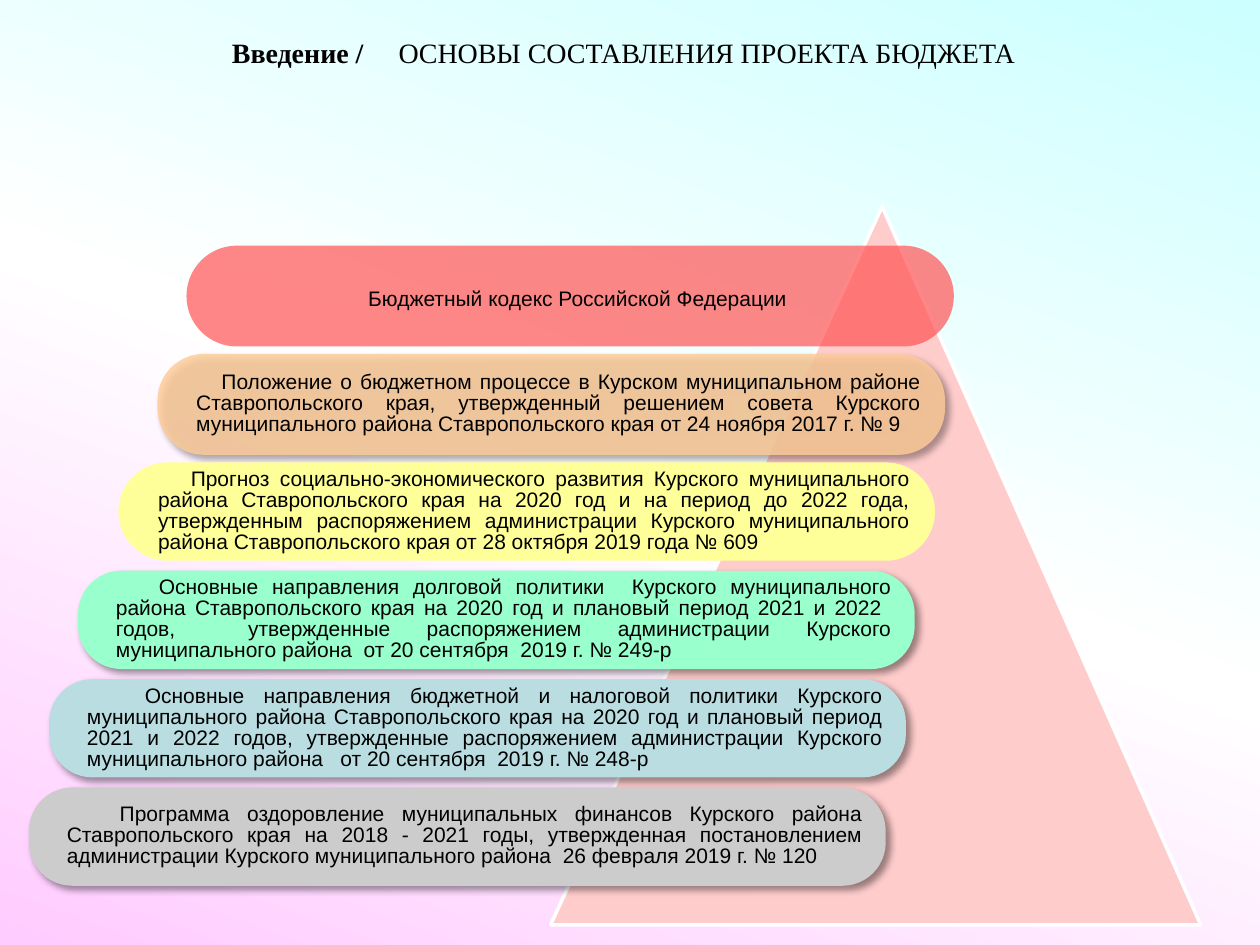
from copy import deepcopy
from dataclasses import dataclass

from lxml.etree import SubElement
from pptx import Presentation
from pptx.dml.color import RGBColor
from pptx.enum.shapes import MSO_SHAPE as Preset
from pptx.enum.text import MSO_ANCHOR as Anchor, MSO_AUTO_SIZE as AutoSize, PP_ALIGN as Align
from pptx.oxml.ns import qn
from pptx.util import Emu, Inches, Pt

COLORS = {
    "black": "000000", "white": "FFFFFF", "cyan": "CCFFFF", "pink": "FFCCFF",
    "rose": "FFCCCC", "red": "FF5050", "orange": "FFCC99", "yellow": "FFFF99",
    "green": "99FFCC", "blue": "BADDE1", "gray": "CCCCCC",
}
FIRST_BAR_TOP = 1.95
BAR_PITCH = 0.86
BODY_FORMAT = {"name": "Arial", "size": Pt(12), "bold": False}
TITLE_FORMAT = {"name": "Times New Roman", "size": Pt(16)}
BAR_FRAME = {
    "margin_left": Inches(0.2), "margin_right": Inches(0.08),
    "margin_top": Inches(0.05), "margin_bottom": Inches(0.05),
    "word_wrap": True, "vertical_anchor": Anchor.MIDDLE,
}
TITLE_FRAME = {
    "word_wrap": True, "vertical_anchor": Anchor.TOP,
    "auto_size": AutoSize.SHAPE_TO_FIT_TEXT,
}


@dataclass
class Bar:
    text: str
    color: str
    left: float
    width: float
    height: float = 0.78
    rounding: float = 0.44
    indent: float = 0
    opacity: int = 100
    shadow: bool = True
    align: Align = Align.JUSTIFY
    line_spacing: int = 12


BARS = [
    Bar("Бюджетный кодекс Российской Федерации", "red", 1.48, 6.09, 0.8, 0.5,
        opacity=69, shadow=False, align=Align.CENTER, line_spacing=17),
    Bar("Положение о бюджетном процессе в Курском муниципальном районе "
        "Ставропольского края, утвержденный решением совета Курского муниципального "
        "района Ставропольского края от 24 ноября 2017 г. № 9",
        "orange", 1.25, 6.25, 0.8, 0.46, indent=0.2, opacity=82),
    Bar("Прогноз социально-экономического развития Курского муниципального района "
        "Ставропольского края на 2020 год и на период до 2022 года, утвержденным "
        "распоряжением администрации Курского муниципального района "
        "Ставропольского края от 28 октября 2019 года № 609",
        "yellow", 0.94, 6.48, rounding=0.5, indent=0.26, shadow=False),
    Bar("Основные направления долговой политики  Курского муниципального района "
        "Ставропольского края на 2020 год и плановый период 2021 и 2022  годов,  "
        "утвержденные распоряжением администрации Курского муниципального района  "
        "от 20 сентября  2019 г. № 249-р",
        "green", 0.62, 6.64, indent=0.34),
    Bar("Основные направления бюджетной и налоговой политики Курского "
        "муниципального района Ставропольского края на 2020 год и плановый период "
        "2021 и 2022 годов, утвержденные распоряжением администрации Курского "
        "муниципального района   от 20 сентября  2019 г. № 248-р",
        "blue", 0.39, 6.8, indent=0.46),
    Bar("Программа оздоровление муниципальных финансов Курского района "
        "Ставропольского края на 2018 - 2021 годы, утвержденная постановлением "
        "администрации Курского муниципального района  26 февраля 2019 г. № 120",
        "gray", 0.23, 6.8, indent=0.42),
]


def rgb(name: str) -> RGBColor:
    return RGBColor.from_string(COLORS[name])


def apply(target, values: dict) -> None:
    for name, value in values.items():
        setattr(target, name, value)


def place(shape, left: float, top: float, width: float, height: float) -> None:
    apply(shape, {"left": Inches(left), "top": Inches(top),
                  "width": Inches(width), "height": Inches(height)})


def paint_background(slide) -> None:
    fill = slide.background.fill
    fill.gradient()
    fill.gradient_angle = 250
    stop_list = slide.element.find(".//" + qn("a:gsLst"))
    stop_list.append(deepcopy(stop_list[0]))
    for stop, name, position in zip(fill.gradient_stops, ("cyan", "white", "pink"), (0, 0.5, 1)):
        stop.color.rgb = rgb(name)
        stop.position = position


def add_title(slide) -> None:
    title = slide.shapes.title
    place(title, 1.09, 0.23, 7.72, 0.37)
    apply(title.text_frame, TITLE_FRAME)
    paragraph = title.text_frame.paragraphs[0]
    paragraph.alignment = Align.CENTER
    parts = (("Введение /", True, 0), (" ", True, 16),
             ("ОСНОВЫ СОСТАВЛЕНИЯ ПРОЕКТА БЮДЖЕТА", False, 0))
    for text, bold, tracking in parts:
        run = paragraph.add_run()
        run.text = text
        apply(run.font, {**TITLE_FORMAT, "bold": bold})
        run.font.color.rgb = rgb("black")
        if tracking:
            run.font._element.set("spc", str(tracking * 100))


def add_triangle(slide) -> None:
    triangle = slide.shapes.add_shape(Preset.ISOSCELES_TRIANGLE, 0, 0, 0, 0)
    place(triangle, 4.37, 1.64, 5.16, 5.7)
    triangle.adjustments[0] = 0.51
    triangle.shadow.inherit = False
    triangle.fill.solid()
    triangle.fill.fore_color.rgb = rgb("rose")
    triangle.line.color.rgb = rgb("white")
    triangle.line.width = Pt(2)


def set_opacity(color_element, percent: int) -> None:
    SubElement(color_element, qn("a:alpha"), val=str(percent * 1000))


def add_drop_shadow(shape) -> None:
    effects = shape.element.spPr.find(qn("a:effectLst"))
    shadow = SubElement(effects, qn("a:outerShdw"), blurRad=str(Pt(4)), dist=str(Pt(3)),
                        dir=str(45 * 60000), algn="tl", rotWithShape="0")
    set_opacity(SubElement(shadow, qn("a:srgbClr"), val=COLORS["black"]), 40)


def add_bar(slide, bar: Bar, row: int) -> None:
    shape = slide.shapes.add_shape(Preset.ROUNDED_RECTANGLE, 0, 0, 0, 0)
    place(shape, bar.left, FIRST_BAR_TOP + row * BAR_PITCH, bar.width, bar.height)
    shape.adjustments[0] = bar.rounding
    shape.shadow.inherit = False
    shape.fill.solid()
    shape.fill.fore_color.rgb = rgb(bar.color)
    shape.line.fill.background()
    if bar.opacity < 100:
        set_opacity(shape.element.spPr.find(qn("a:solidFill"))[0], bar.opacity)
    if bar.shadow:
        add_drop_shadow(shape)

    apply(shape.text_frame, BAR_FRAME)
    paragraph = shape.text_frame.paragraphs[0]
    apply(paragraph, {"alignment": bar.align, "line_spacing": Pt(bar.line_spacing)})
    if bar.indent:
        paragraph._p.get_or_add_pPr().set("indent", str(Emu(Inches(bar.indent))))
    run = paragraph.add_run()
    run.text = bar.text
    apply(run.font, BODY_FORMAT)
    run.font.color.rgb = rgb("black")


def main() -> None:
    presentation = Presentation()
    apply(presentation, {"slide_width": Inches(10), "slide_height": Inches(7.5)})
    slide = presentation.slides.add_slide(presentation.slide_layouts[5])
    paint_background(slide)
    add_title(slide)
    add_triangle(slide)
    for row, bar in enumerate(BARS):
        add_bar(slide, bar, row)
    presentation.save("out.pptx")


if __name__ == "__main__":
    main()
